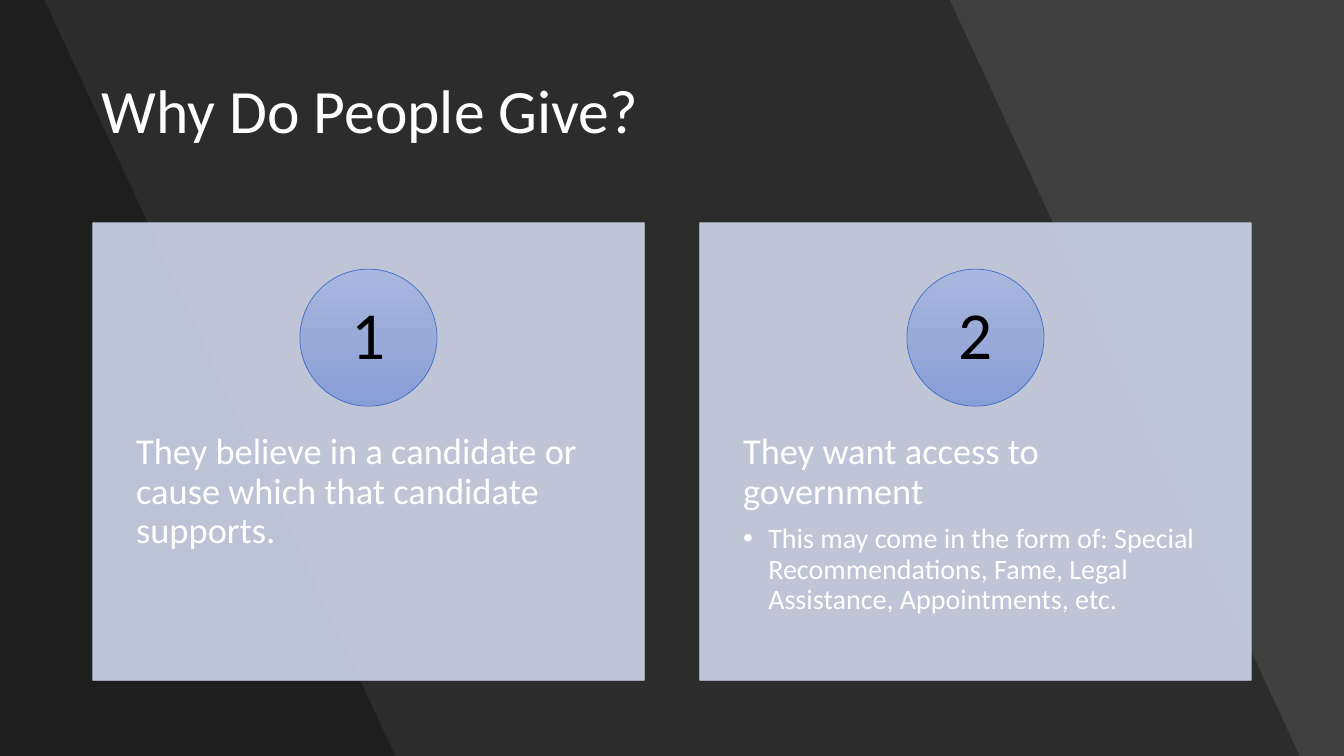
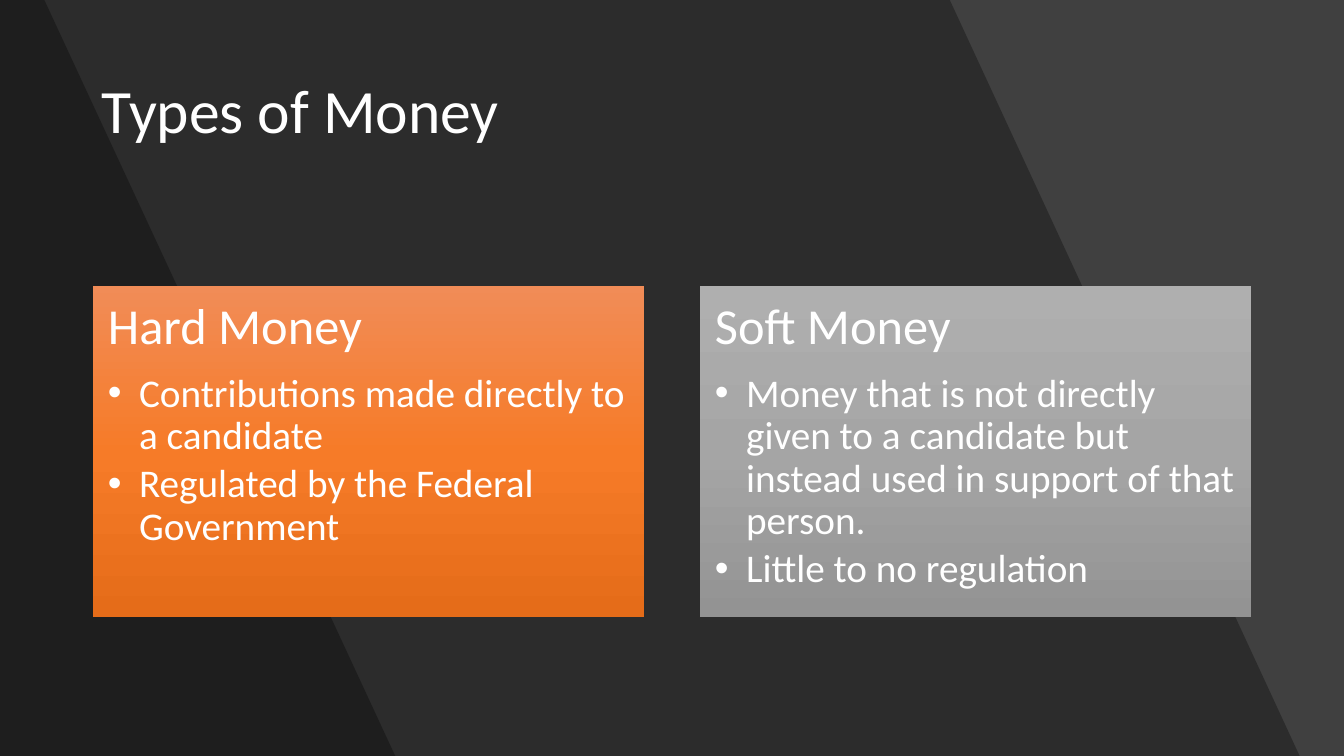
from copy import deepcopy
from dataclasses import dataclass

from lxml.etree import SubElement
from pptx import Presentation
from pptx.dml.color import RGBColor as RGB
from pptx.enum.shapes import MSO_SHAPE as Shape
from pptx.enum.text import MSO_ANCHOR as Anchor, MSO_AUTO_SIZE as Fit, PP_ALIGN as Align
from pptx.oxml.ns import qn
from pptx.util import Inches, Pt


@dataclass(frozen=True)
class Theme:
    font: str = "Calibri"
    back: str = "404040"
    band: str = "000000"
    text: str = "FFFFFF"
    digit: str = "000000"
    card: str = "CFD5EA"
    edge: str = "4472C4"
    blue: tuple = ("A8B7DF", "9AABD9", "889ED7")
    warm: tuple = ("F18C57", "F67B28", "E56C19")
    gray: tuple = ("AFAFAF", "A5A5A5", "939393")
    title: int = 44
    number: int = 48
    reason: tuple = (26, 20)
    kind: tuple = (36, 28)


WIDE, HIGH = 13.33, 7.5
LEFT, STEP, CARD = 0.92, 6.02, 5.47
DISC = 1.36


def solid(shape, colour, alpha, line=False):
    shape.fill.solid()
    shape.fill.fore_color.rgb = RGB.from_string(colour)
    if line:
        shape.line.color.rgb = RGB.from_string(colour)
        shape.line.width = Pt(0.5)
    else:
        shape.line.fill.background()
    for tone in shape.element.spPr.iter(qn("a:srgbClr")):
        SubElement(tone, qn("a:alpha"), val=str(alpha * 1000))


def blend(shape, colours):
    """Fill with three colours running from top to bottom."""
    fill = shape.fill
    fill.gradient()
    fill.gradient_angle = 270
    stops = shape.element.spPr.find(".//" + qn("a:gsLst"))
    stops.insert(1, deepcopy(stops[0]))
    for stop, colour, place in zip(fill.gradient_stops, colours, (0, 0.5, 1)):
        stop.color.rgb = RGB.from_string(colour)
        stop.position = place


def inset(frame, side, top, base):
    frame.margin_left = frame.margin_right = Inches(side)
    frame.margin_top, frame.margin_bottom = Inches(top), Inches(base)


class Deck:
    def __init__(self, theme):
        self.theme = theme
        self.prs = Presentation()
        self.prs.slide_width, self.prs.slide_height = Inches(WIDE), Inches(HIGH)
        self.layout = self.prs.slide_layouts.get_by_name("Two Content")
        fill = self.layout.background.fill
        fill.solid()
        fill.fore_color.rgb = RGB.from_string(theme.back)
        self.page = None

    def style(self, para, size, colour, after=0):
        para.line_spacing = 0.9
        para.space_before = Pt(0)
        para.space_after = Pt(round(size * after, 1))
        para.font.name = self.theme.font
        para.font.size = Pt(size)
        para.font.color.rgb = RGB.from_string(colour)

    def bands(self):
        """Put the slanted bands on the layout, behind every slide."""
        for index, (top, base) in enumerate(((9.42, 12.89), (0.44, 3.92)), 2):
            pen = self.page.shapes.build_freeform(0, 0)
            pen.add_line_segments([(Inches(x), Inches(y)) for x, y in
                                   ((top, 0), (base, HIGH), (0, HIGH))])
            band = pen.convert_to_shape()
            band.shadow.inherit = False
            solid(band, self.theme.band, 30)
            self.layout.shapes.element.insert(index, band.element)

    def open(self, text):
        """Start a slide with its title."""
        self.page = self.prs.slides.add_slide(self.layout)
        if len(self.prs.slides) == 1:
            self.bands()
        title = self.page.shapes.title
        self.place(title, 0.91, 0.4, 11.51, 1.45)
        frame = title.text_frame
        frame.text = text
        frame.auto_size = Fit.NONE
        frame.vertical_anchor = Anchor.MIDDLE
        para = frame.paragraphs[0]
        para.alignment = Align.LEFT
        self.style(para, self.theme.title, self.theme.text)

    def place(self, shape, left, top, width, height):
        shape.left, shape.top = Inches(left), Inches(top)
        shape.width, shape.height = Inches(width), Inches(height)

    def card(self, col, top, height, lines, sizes, hang):
        """Turn a body placeholder into a card: a heading, then bullets."""
        card = self.page.placeholders[col + 1]
        self.place(card, LEFT + col * STEP, top, CARD, height)
        frame = card.text_frame
        frame.auto_size = Fit.NONE
        frame.vertical_anchor = Anchor.TOP
        frame.text = "\n".join(lines)
        head, *points = frame.paragraphs
        self.mark(head, 0)
        self.style(head, sizes[0], self.theme.text, 0.35)
        for point in points:
            point.level = 1
            self.mark(point, hang)
            self.style(point, sizes[1], self.theme.text, 0.15)
        return card

    def mark(self, para, hang):
        """Set a bullet with a hanging indent, or none when hang is 0."""
        props = para._p.get_or_add_pPr()
        props.set("marL", str(Inches(hang)))
        props.set("indent", str(-Inches(hang)))
        if hang:
            SubElement(props, qn("a:buFont"), typeface="Arial")
            SubElement(props, qn("a:buChar"), char="•")
        else:
            SubElement(props, qn("a:buNone"))

    def reason(self, col, lines):
        card = self.card(col, 2.21, 4.54, lines, self.theme.reason, 0.25)
        solid(card, self.theme.card, 90, line=True)
        inset(card.text_frame, 0.43, 2.09, 0.36)
        self.disc(col, str(col + 1))

    def disc(self, col, text):
        left = LEFT + col * STEP + (CARD - DISC) / 2
        disc = self.page.shapes.add_shape(
            Shape.OVAL, Inches(left), Inches(2.67), Inches(DISC), Inches(DISC))
        disc.shadow.inherit = False
        blend(disc, self.theme.blue)
        disc.line.color.rgb = RGB.from_string(self.theme.edge)
        disc.line.width = Pt(0.5)
        frame = disc.text_frame
        frame.text = text
        frame.vertical_anchor = Anchor.MIDDLE
        inset(frame, 0.11, 0.01, 0.01)
        para = frame.paragraphs[0]
        para.alignment = Align.CENTER
        self.style(para, self.theme.number, self.theme.digit)

    def kind(self, col, colours, lines):
        card = self.card(col, 2.84, 3.28, lines, self.theme.kind, 0.31)
        blend(card, colours)
        inset(card.text_frame, 0.15, 0.15, 0.15)


def main():
    theme = Theme()
    deck = Deck(theme)

    deck.open("Why Do People Give?")
    deck.reason(0, ["They believe in a candidate or cause which that candidate supports."])
    deck.reason(1, [
        "They want access to government",
        "This may come in the form of: Special Recommendations, Fame, "
        "Legal Assistance, Appointments, etc.",
    ])

    deck.open("Types of Money")
    deck.kind(0, theme.warm, [
        "Hard Money",
        "Contributions made directly to a candidate",
        "Regulated by the Federal Government",
    ])
    deck.kind(1, theme.gray, [
        "Soft Money",
        "Money that is not directly given to a candidate but instead used "
        "in support of that person.",
        "Little to no regulation",
    ])

    deck.prs.save("out.pptx")


if __name__ == "__main__":
    main()
